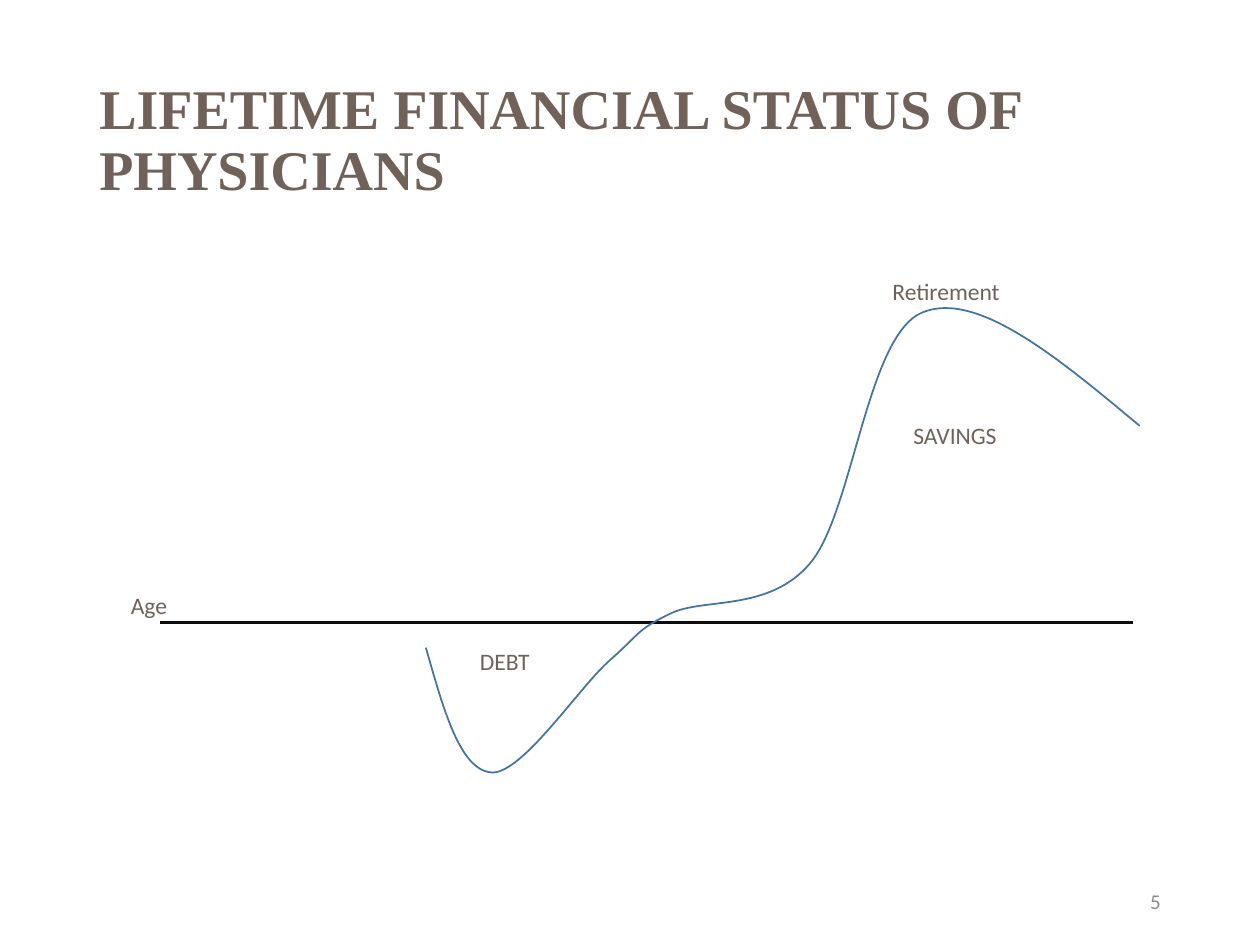
from lxml.etree import SubElement
from pptx import Presentation
from pptx.dml.color import RGBColor
from pptx.enum.shapes import MSO_CONNECTOR as Connector
from pptx.enum.text import MSO_ANCHOR as Anchor, PP_ALIGN as Align
from pptx.oxml.ns import qn
from pptx.util import Inches, Pt

BROWN = RGBColor(0x70, 0x62, 0x58)
GRAY = RGBColor(0x8C, 0x8C, 0x8C)
BLACK = RGBColor(0x0D, 0x0D, 0x0D)
BLUE = RGBColor(0x43, 0x73, 0x9E)

COLUMNS, ROWS = 100, 75

TITLE = {"name": "Times New Roman", "size": Pt(32), "bold": True}
LABEL = {"name": "Calibri", "size": Pt(13.5)}
PAGE_NUMBER = {"name": "Calibri", "size": Pt(12)}

# Wealth over a lifetime: a start, then two control points and an end per span
CURVE_START = (33.8, 51.4)
CURVE_PEAK = (75, 24.4)
CURVE_SPANS = [
    ((35.2, 56.3), (36.5, 61.1), (39, 61.3)),
    ((41.4, 61.5), (46, 54.5), (48.4, 52.4)),
    ((50.8, 50.3), (50.5, 50), (53.2, 48.7)),
    ((55.8, 47.4), (61, 48.6), (64.3, 44.7)),
    ((67.7, 40.7), (68.8, 26.6), (73.2, 24.8)),
    ((77.5, 23), (84, 28.4), (90.45, 33.8)),
]

LABELS = [
    ("DEBT", 37.1, 50.85, 6.2),
    ("SAVINGS", 71.5, 32.9, 8.9),
    ("Age", 9.4, 46.4, 6),
    ("Retirement", 69.85, 21.5, 12),
]


class SlideBuilder:
    def __init__(self, presentation):
        self.column = presentation.slide_width / COLUMNS
        self.row = presentation.slide_height / ROWS
        self.slide = presentation.slides.add_slide(presentation.slide_layouts[6])

    def place(self, column, row):
        return round(column * self.column), round(row * self.row)

    def text(self, words, column, row, width, height, style, color=BROWN,
             anchor=Anchor.TOP, **paragraph_format):
        box = self.slide.shapes.add_textbox(*self.place(column, row), *self.place(width, height))
        frame = box.text_frame
        frame.word_wrap = True
        frame.vertical_anchor = anchor
        paragraph = frame.paragraphs[0]
        for key, value in paragraph_format.items():
            setattr(paragraph, key, value)
        run = paragraph.add_run()
        run.text = words
        for key, value in style.items():
            setattr(run.font, key, value)
        run.font.color.rgb = color

    def line(self, start, end, color, width):
        connector = self.slide.shapes.add_connector(
            Connector.STRAIGHT, *self.place(*start), *self.place(*end))
        connector.line.color.rgb = color
        connector.line.width = Pt(width)
        SubElement(connector.element.spPr, qn("a:effectLst"))

    def curve(self, start, peak, spans, color, width):
        # Straight outline through the span ends and the peak sets the bounds
        builder = self.slide.shapes.build_freeform(*self.place(*start))
        corners = [span[-1] for span in spans] + [peak]
        builder.add_line_segments([self.place(*corner) for corner in corners], close=False)
        shape = builder.convert_to_shape()

        # Cubic spans take the place of the straight segments
        outline = next(shape.element.iter(qn("a:path")))
        for segment in outline.findall(qn("a:lnTo")):
            outline.remove(segment)
        for span in spans:
            cubic = SubElement(outline, qn("a:cubicBezTo"))
            for point in span:
                x, y = self.place(*point)
                SubElement(cubic, qn("a:pt"), x=str(x - shape.left), y=str(y - shape.top))

        shape.shadow.inherit = False
        shape.fill.background()
        shape.line.color.rgb = color
        shape.line.width = Pt(width)


def main():
    presentation = Presentation()
    presentation.slide_width, presentation.slide_height = Inches(10), Inches(7.5)
    builder = SlideBuilder(presentation)

    # Title
    builder.text("LIFETIME FINANCIAL STATUS OF PHYSICIANS", 6.9, 4, 88, 14.5, TITLE,
                 anchor=Anchor.MIDDLE, line_spacing=0.9)

    # Age axis and wealth curve
    builder.line((12.7, 49.4), (89.9, 49.4), BLACK, 1.5)
    builder.curve(CURVE_START, CURVE_PEAK, CURVE_SPANS, BLUE, 1)

    # Labels
    for words, column, row, width in LABELS:
        builder.text(words, column, row, width, 3.3, LABEL)

    # Page number
    builder.text("5", 70.6, 69.5, 22.5, 4, PAGE_NUMBER, GRAY,
                 anchor=Anchor.MIDDLE, alignment=Align.RIGHT)

    presentation.save("out.pptx")


if __name__ == "__main__":
    main()
